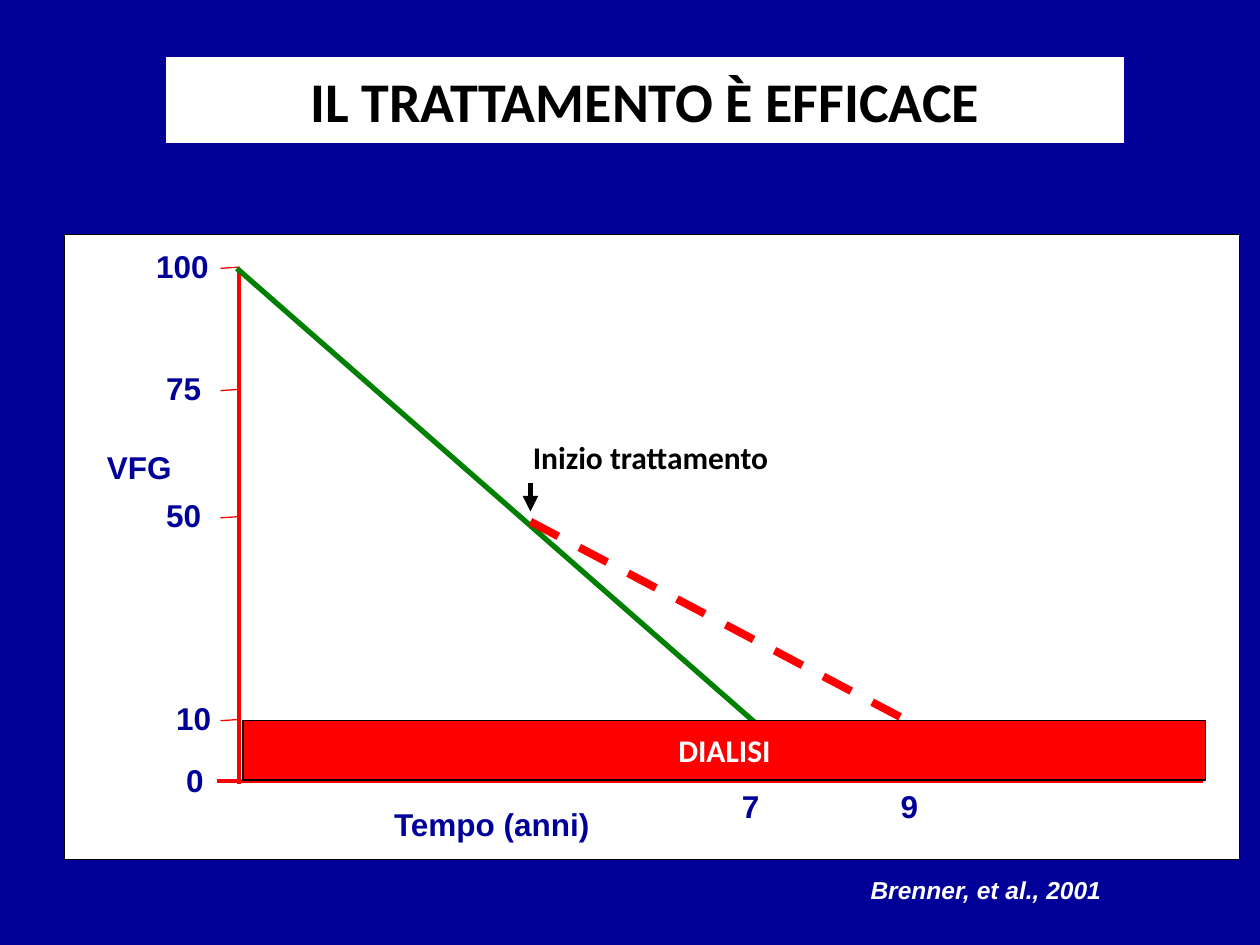
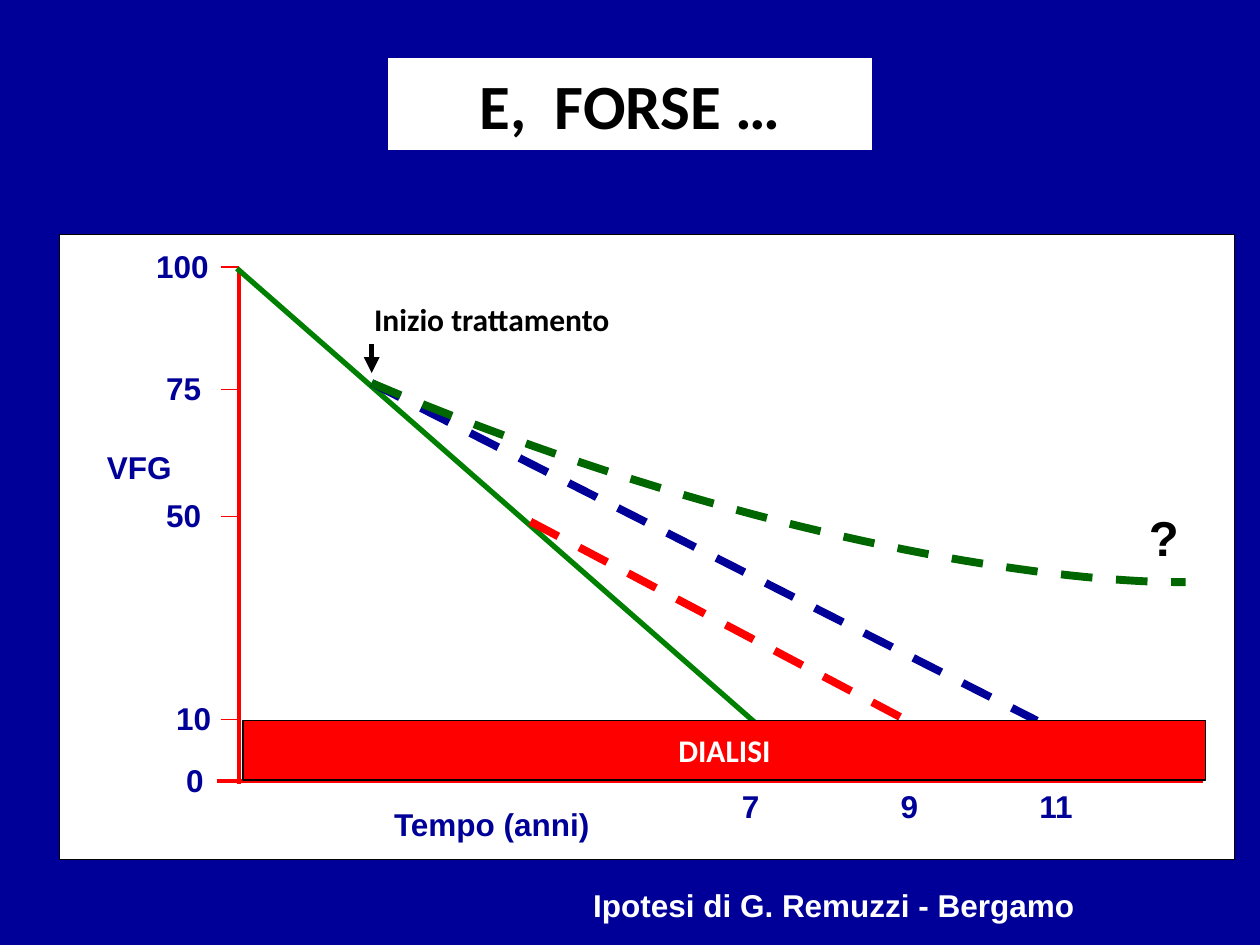
"""Builds two slides on how treatment slows the decline of kidney filtration."""
from dataclasses import dataclass

from lxml import etree
from pptx import Presentation
from pptx import util as u
from pptx.dml.color import RGBColor
from pptx.enum import dml, shapes, text
from pptx.oxml import ns


@dataclass(frozen=True)
class Theme:
    navy: str = "000099"
    white: str = "FFFFFF"
    black: str = "000000"
    red: str = "FF0000"
    green: str = "008000"
    dark_green: str = "006600"
    heading_font: str = "Calibri"
    label_font: str = "Arial"
    label_size: int = 18
    source_size: int = 14
    question_size: int = 28
    hairline: float = 0.75
    axis: float = 2.25
    trend: float = 3
    forecast: float = 4.5


theme = Theme()
presentation = Presentation()
presentation.slide_width, presentation.slide_height = u.Inches(10), u.Inches(7.5)
column = presentation.slide_width / 100
row = presentation.slide_height / 75
background = presentation.slide_master.background.fill
background.solid()
background.fore_color.rgb = RGBColor.from_string(theme.navy)


def place(left, top, width, height):
    return [round(n) for n in (left * column, top * row, width * column, height * row)]


def add_line(slide, start, end, color, weight, dashed=False, arrow=False):
    corners = place(*start, *end)
    line = slide.shapes.add_connector(shapes.MSO_CONNECTOR.STRAIGHT, *corners)
    line.line.color.rgb = RGBColor.from_string(color)
    line.line.width = u.Pt(weight)
    if dashed:
        line.line.dash_style = dml.MSO_LINE.DASH
    properties = line._element.spPr
    if arrow:
        outline = properties.find(ns.qn("a:ln"))
        etree.SubElement(outline, ns.qn("a:tailEnd"), type="triangle")
    etree.SubElement(properties, ns.qn("a:effectLst"))


axis_column, axis_row, band_row = 19, 62, 57.2
label_height = 4
ticks = {"100": (21.2, 11.4, 6.2), "75": (30.9, 12.2, 4.8), "50": (41, 12.2, 4.8),
         "10": (57.1, 13, 4.8), "0": (axis_row, 13.8, 3.4)}
years = {"7": (60.1, 57.9, 3.4), "9": (72, 70.5, 3.4), "11": (82.3, 81.5, 4.8)}
standard_start, early_start = (42.1, 41.4), (29.5, 30.4)
left_align, center, right_align = text.PP_ALIGN.LEFT, text.PP_ALIGN.CENTER, text.PP_ALIGN.RIGHT

slide_plans = [
    dict(title="IL TRATTAMENTO È EFFICACE", title_box=(13, 4.4, 76.4, 7.1), title_size=32,
         title_line=2.25, panel_left=5.1, slant=0.1, years=["7", "9"], treatment=standard_start,
         forecasts=[(standard_start, "9", theme.red)], curve=None,
         source="Brenner, et al., 2001", source_box=(5.1, 69, 83.3, 3.2),
         source_size=theme.source_size, source_align=right_align, italic=True),
    dict(title="E,  FORSE …", title_box=(30.6, 4.4, 38.8, 7.7), title_size=36,
         title_line=3, panel_left=4.7, slant=0, years=["7", "9", "11"], treatment=early_start,
         forecasts=[(standard_start, "9", theme.red), (early_start, "11", theme.navy)],
         curve=[early_start, (58.5, 42.7), (83.2, 46.3), (94.1, 46.2)],
         source="Ipotesi di G. Remuzzi - Bergamo", source_box=(46.1, 69.8, 40.2, label_height),
         source_size=theme.label_size, source_align=left_align, italic=False),
]

for plan in slide_plans:
    slide = presentation.slides.add_slide(presentation.slide_layouts[5])
    title = slide.shapes.title
    title.left, title.top, title.width, title.height = place(*plan["title_box"])
    panel = slide.shapes.add_shape(shapes.MSO_SHAPE.RECTANGLE,
                                   *place(plan["panel_left"], 18.6, 93.3, 49.6))

    add_line(slide, (axis_column, 21.3), (axis_column, 62.2), theme.red, theme.axis)
    add_line(slide, (17.2, axis_row), (95.5, axis_row), theme.red, theme.axis)
    for value, (tick_row, label_left, label_width) in ticks.items():
        if value != "0":
            add_line(slide, (17.5, tick_row + plan["slant"]), (axis_column, tick_row),
                     theme.red, theme.hairline)
    add_line(slide, (18.8, 21.3), (60.1, 57.5), theme.green, theme.trend)
    for start, year, color in plan["forecasts"]:
        add_line(slide, start, (years[year][0], band_row), color, theme.forecast, dashed=True)
    arrow_column, start_row = plan["treatment"]
    add_line(slide, (arrow_column, start_row - 3.1), (arrow_column, start_row - 0.8),
             theme.black, theme.trend, arrow=True)

    if plan["curve"]:
        points = []
        for step in range(41):
            t = step / 40
            weights = ((1 - t) ** 3, 3 * t * (1 - t) ** 2, 3 * t ** 2 * (1 - t), t ** 3)
            x, y = (sum(w * n for w, n in zip(weights, axis)) for axis in zip(*plan["curve"]))
            points.append((round(x * column), round(y * row)))
        builder = slide.shapes.build_freeform(*points[0])
        builder.add_line_segments(points[1:], close=False)
        curve = builder.convert_to_shape()
        curve.fill.background()
        curve.line.color.rgb = RGBColor.from_string(theme.dark_green)
        curve.line.width = u.Pt(theme.forecast)
        curve.line.dash_style = dml.MSO_LINE.DASH
        curve.shadow.inherit = False

    band = slide.shapes.add_shape(shapes.MSO_SHAPE.RECTANGLE, *place(19.3, band_row, 76.4, 4.7))
    for box, fill, line, weight in [(title, theme.white, theme.navy, plan["title_line"]),
                                    (panel, theme.white, theme.black, theme.hairline),
                                    (band, theme.red, theme.black, theme.hairline)]:
        box.fill.solid()
        box.fill.fore_color.rgb = RGBColor.from_string(fill)
        box.line.color.rgb = RGBColor.from_string(line)
        box.line.width = u.Pt(weight)
    for box in (panel, band):
        box.shadow.inherit = False

    navy_label = (theme.label_font, theme.label_size, theme.navy, left_align)
    labels = [("Tempo (anni)", (30.3, 63.4, 17.7, label_height), *navy_label),
              ("VFG", (7.5, 35.1, 7.2, label_height), *navy_label),
              ("Inizio trattamento", (arrow_column - 0.8, start_row - 7.1, 22.8, label_height),
               theme.heading_font, theme.label_size, theme.black, left_align),
              (plan["source"], plan["source_box"], theme.label_font, plan["source_size"],
               theme.white, plan["source_align"])]
    for value, (tick_row, left, width) in ticks.items():
        labels.append((value, (left, tick_row - 2.1, width, label_height), *navy_label))
    for year in plan["years"]:
        end_column, left, width = years[year]
        labels.append((year, (left, axis_row, width, label_height), *navy_label))
    if plan["curve"]:
        labels.append(("?", (90.2, 39.8, 4.4, 5.7), theme.label_font, theme.question_size,
                       theme.black, left_align))

    written = [(title, plan["title"], theme.heading_font, plan["title_size"], theme.black, center),
               (band, "DIALISI", theme.heading_font, theme.label_size, theme.white, center)]
    for words, box, *style in labels:
        written.append((slide.shapes.add_textbox(*place(*box)), words, *style))
    for shape, words, font, size, color, alignment in written:
        frame = shape.text_frame
        frame.text = words
        frame.auto_size = text.MSO_AUTO_SIZE.NONE
        frame.word_wrap = alignment == right_align
        frame.vertical_anchor = text.MSO_ANCHOR.MIDDLE
        paragraph = frame.paragraphs[0]
        paragraph.alignment = alignment
        for run in paragraph.runs:
            run.font.name, run.font.size, run.font.bold = font, u.Pt(size), True
            run.font.italic = plan["italic"] and words == plan["source"]
            run.font.color.rgb = RGBColor.from_string(color)

presentation.save("out.pptx")
